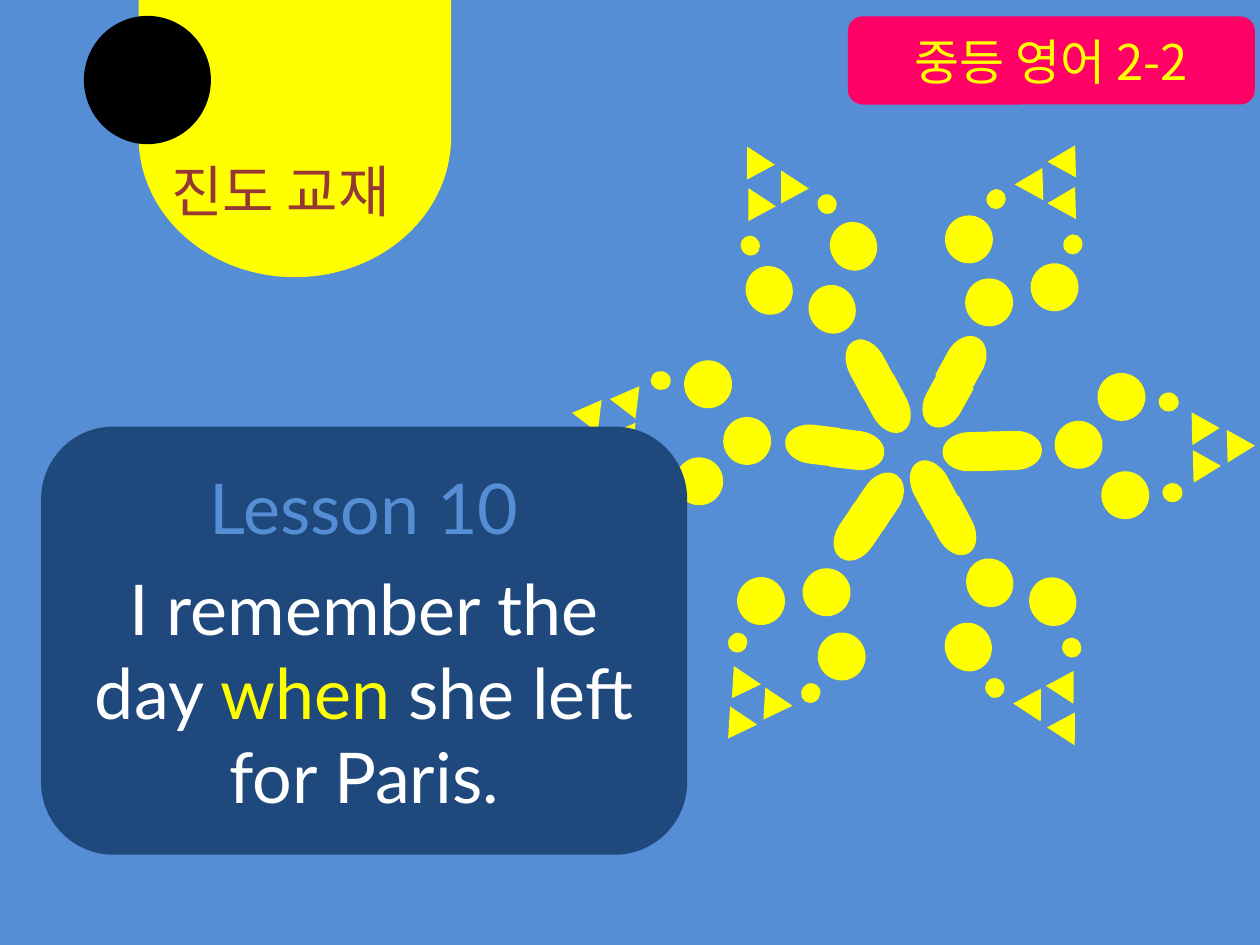
from pptx import Presentation
from pptx.dml.color import RGBColor
from pptx.enum.shapes import MSO_SHAPE as SHAPE
from pptx.enum.text import MSO_ANCHOR as ANCHOR, PP_ALIGN as ALIGN
from pptx.util import Inches, Pt

SKY = RGBColor(0x55, 0x8E, 0xD5)
YELLOW = RGBColor(0xFF, 0xFF, 0x00)
PINK = RGBColor(0xFF, 0x00, 0x66)
NAVY = RGBColor(0x1F, 0x49, 0x7D)
BROWN = RGBColor(0x95, 0x37, 0x35)
BLACK = RGBColor(0x00, 0x00, 0x00)
WHITE = RGBColor(0xFF, 0xFF, 0xFF)
LATIN = "Lato"
KOREAN = "Noto Sans CJK KR"

prs = Presentation()
prs.slide_width = Inches(10)
prs.slide_height = Inches(7.5)
slide = prs.slides.add_slide(prs.slide_layouts[6])
slide.background.fill.solid()
slide.background.fill.fore_color.rgb = SKY


def add_figure(kind, left, top, width, height, color, angle=0, outlined=False):
    figure = slide.shapes.add_shape(
        kind, Inches(left), Inches(top), Inches(width), Inches(height))
    figure.rotation = angle % 360
    figure.shadow.inherit = False
    figure.fill.solid()
    figure.fill.fore_color.rgb = color
    if outlined:
        figure.line.color.rgb = color
        figure.line.width = Pt(2)
    else:
        figure.line.fill.background()
    return figure


def style(paragraph, size, font, color, align=ALIGN.LEFT):
    paragraph.alignment = align
    paragraph.font.size = Pt(size)
    paragraph.font.name = font
    paragraph.font.color.rgb = color


course = add_figure(SHAPE.FLOWCHART_ALTERNATE_PROCESS, 6.73, 0.13, 3.23, 0.7, PINK)
course.text_frame.text = "중등 영어 2-2"
course.text_frame.vertical_anchor = ANCHOR.MIDDLE
style(course.text_frame.paragraphs[0], 28, KOREAN, YELLOW, ALIGN.CENTER)

narrow = {"tip": (0.25, 0.23), "dot": (0.15, 0.16), "stem": (0.44, 0.3), "bead": (0.37, 0.39)}
wide = {"tip": (0.26, 0.22), "dot": (0.15, 0.16), "stem": (0.42, 0.31), "bead": (0.38, 0.38)}

arms = [
    (331.8, narrow, {
        "tip": [(5.86, 1.15), (6.13, 1.34), (5.87, 1.48)],
        "dot": [(5.88, 1.87), (6.49, 1.54)],
        "stem": [(6.84, 3.08), (6.66, 2.75)],
        "bead": [(5.92, 2.11), (6.59, 1.76), (6.42, 2.26)]}),
    (151.8, narrow, {
        "tip": [(8.35, 5.7), (8.08, 5.51), (8.34, 5.37)],
        "dot": [(8.43, 5.06), (7.82, 5.38)],
        "stem": [(7.17, 3.71), (7.36, 4.05)],
        "bead": [(8.17, 4.58), (7.5, 4.94), (7.67, 4.43)]}),
    (214, wide, {
        "tip": [(5.71, 5.66), (5.74, 5.34), (5.99, 5.51)],
        "dot": [(6.36, 5.42), (5.78, 5.02)],
        "stem": [(6.79, 3.79), (6.58, 4.1)],
        "bead": [(6.49, 5.02), (5.85, 4.58), (6.37, 4.51)]}),
    (277, wide, {
        "tip": [(4.52, 3.18), (4.82, 3.07), (4.79, 3.36)],
        "dot": [(5.17, 2.94)],
        "stem": [(6.6, 3.42), (6.23, 3.37)],
        "bead": [(5.36, 3.63), (5.43, 2.86), (5.74, 3.31)]}),
    (28.8, wide, {
        "tip": [(8.35, 1.14), (8.35, 1.47), (8.09, 1.32)],
        "dot": [(7.83, 1.5), (8.44, 1.86)],
        "stem": [(7.28, 3.04), (7.45, 2.71)],
        "bead": [(7.5, 1.71), (8.18, 2.09), (7.66, 2.21)]}),
    (88.7, wide, {
        "tip": [(9.72, 3.43), (9.45, 3.59), (9.44, 3.29)],
        "dot": [(9.2, 3.11), (9.23, 3.83)],
        "stem": [(7.48, 3.43), (7.85, 3.42)],
        "bead": [(8.71, 2.96), (8.74, 3.74), (8.37, 3.34)]}),
]
kinds = {"tip": SHAPE.ISOSCELES_TRIANGLE, "dot": SHAPE.OVAL,
         "stem": SHAPE.FLOWCHART_DELAY, "bead": SHAPE.OVAL}

for angle, sizes, parts in arms:
    for part, places in parts.items():
        for i, (left, top) in enumerate(places):
            turn = 90 + 180 * i if part == "stem" else 0
            add_figure(kinds[part], left, top, *sizes[part], YELLOW, angle + turn)

lesson = add_figure(SHAPE.ROUNDED_RECTANGLE, 0.34, 3.4, 5.1, 3.37, NAVY, outlined=True)
lesson_text = lesson.text_frame
lesson_text.vertical_anchor = ANCHOR.MIDDLE
lesson_text.text = "Lesson 10"
style(lesson_text.paragraphs[0], 40, LATIN, SKY, ALIGN.CENTER)
sentence = lesson_text.add_paragraph()
style(sentence, 40, LATIN, WHITE, ALIGN.CENTER)
sentence.space_before = Pt(9.6)
for words, color in [("I remember the day ", WHITE), ("when ", YELLOW),
                     ("she left for Paris.", WHITE)]:
    run = sentence.add_run()
    run.text = words
    run.font.color.rgb = color

add_figure(SHAPE.FLOWCHART_DELAY, 1.23, -0.15, 2.22, 2.48, YELLOW, 90)
textbook = slide.shapes.add_textbox(Inches(1.26), Inches(1.19), Inches(2.32), Inches(1.18))
textbook.text_frame.word_wrap = True
textbook.text_frame.text = "진도 교재"
style(textbook.text_frame.paragraphs[0], 32, LATIN, BROWN)

add_figure(SHAPE.OVAL, 0.68, 0.14, 0.98, 0.99, BLACK, outlined=True)

prs.save("out.pptx")
